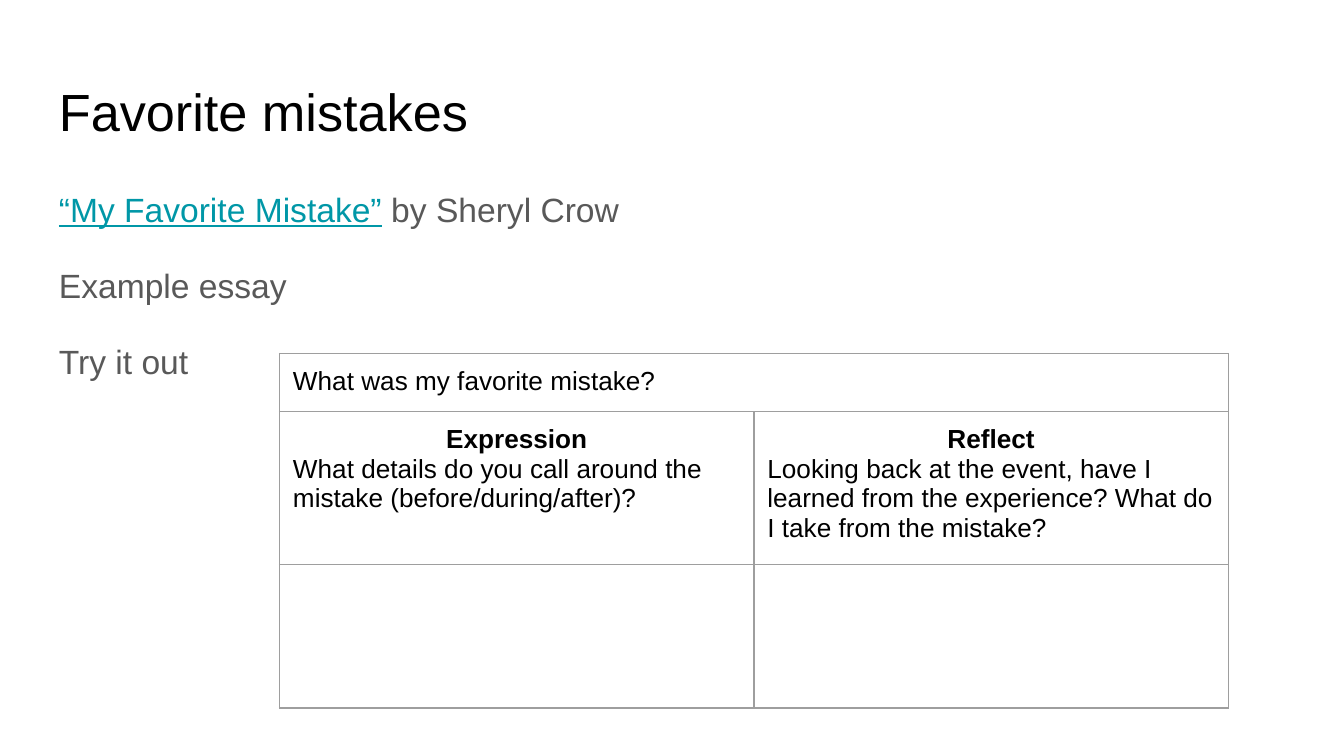
from pptx import Presentation
from pptx.dml.color import RGBColor
from pptx.enum.text import PP_ALIGN
from pptx.oxml import parse_xml
from pptx.oxml.ns import nsdecls
from pptx.util import Inches, Pt

CENTER = PP_ALIGN.CENTER
BLACK = RGBColor(0x00, 0x00, 0x00)
GRAY = RGBColor(0x59, 0x59, 0x59)
TEAL = RGBColor(0x00, 0x97, 0xA7)
BORDER = RGBColor(0x9E, 0x9E, 0x9E)

HEADING = {"size": Pt(28), "color": BLACK}
BODY = {"size": Pt(18), "color": GRAY}
SONG = {**BODY, "color": TEAL, "underline": True}
PROMPT = {"size": Pt(14), "color": BLACK}
LABEL = {**PROMPT, "bold": True}

# Each paragraph is a list of (text, format) runs.
TITLE = [[("Favorite mistakes", HEADING)]]
AGENDA = [
    [("“My Favorite Mistake”", SONG), (" by Sheryl Crow", BODY)],
    [("Example essay", BODY)],
    [("Try it out", BODY)],
]
QUESTION = "What was my favorite mistake?"
COLUMNS = [
    ("Expression", "What details do you call around the mistake (before/during/after)?"),
    ("Reflect", "Looking back at the event, have I learned from the experience? "
                "What do I take from the mistake?"),
]
COLUMN_WIDTH = 3.53
ROW_HEIGHTS = [0.42, 1.07, 1.07]
MARGIN = Inches(0.1)
SLIDE_WIDTH = Inches(10)
SLIDE_HEIGHT = SLIDE_WIDTH * 9 // 16


def set_margins(target):
    for side in ("left", "right", "top", "bottom"):
        setattr(target, f"margin_{side}", MARGIN)


def write(frame, paragraphs, **paragraph_format):
    for index, runs in enumerate(paragraphs):
        paragraph = frame.paragraphs[0] if index == 0 else frame.add_paragraph()
        for name, value in paragraph_format.items():
            setattr(paragraph, name, value)
        for text, run_format in runs:
            run = paragraph.add_run()
            run.text = text
            run.font.name = "Arial"
            for name, value in run_format.items():
                if name == "color":
                    run.font.color.rgb = value
                else:
                    setattr(run.font, name, value)


def add_text(slide, box, paragraphs, **paragraph_format):
    frame = slide.shapes.add_textbox(*map(Inches, box)).text_frame
    frame.word_wrap = True
    set_margins(frame)
    write(frame, paragraphs, **paragraph_format)


def outline(cell):
    properties = cell._tc.get_or_add_tcPr()
    for position, edge in enumerate(("lnL", "lnR", "lnT", "lnB")):
        properties.insert(position, parse_xml(
            f'<a:{edge} {nsdecls("a")} w="{Pt(0.75)}"><a:solidFill>'
            f'<a:srgbClr val="{BORDER}"/></a:solidFill></a:{edge}>'))


def set_end_size(cell):
    """Keep paragraph ends at prompt size so that they do not stretch the row."""
    for paragraph in cell.text_frame.paragraphs:
        paragraph._p.append(parse_xml(
            f'<a:endParaRPr {nsdecls("a")} sz="{PROMPT["size"].centipoints}"/>'))


def add_worksheet(slide):
    table = slide.shapes.add_table(
        len(ROW_HEIGHTS), len(COLUMNS), Inches(2.08), Inches(2.63),
        Inches(COLUMN_WIDTH * len(COLUMNS)), Inches(sum(ROW_HEIGHTS))).table
    table.first_row = table.horz_banding = False
    for column in table.columns:
        column.width = Inches(COLUMN_WIDTH)
    for row, height in zip(table.rows, ROW_HEIGHTS):
        row.height = Inches(height)

    table.cell(0, 0).merge(table.cell(0, len(COLUMNS) - 1))
    write(table.cell(0, 0).text_frame, [[(QUESTION, PROMPT)]])
    for index, (label, prompt) in enumerate(COLUMNS):
        frame = table.cell(1, index).text_frame
        write(frame, [[(label, LABEL)], [(prompt, PROMPT)]])
        frame.paragraphs[0].alignment = CENTER

    for cell in table.iter_cells():
        cell.fill.background()
        set_margins(cell)
        outline(cell)
        set_end_size(cell)


def main():
    deck = Presentation()
    deck.slide_width, deck.slide_height = SLIDE_WIDTH, SLIDE_HEIGHT
    slide = deck.slides.add_slide(deck.slide_layouts[6])
    add_text(slide, (0.34, 0.49, 9.32, 0.63), TITLE)
    add_text(slide, (0.34, 1.26, 9.32, 3.74), AGENDA,
             line_spacing=1.15, space_after=Pt(16))
    add_worksheet(slide)
    deck.save("out.pptx")


if __name__ == "__main__":
    main()
